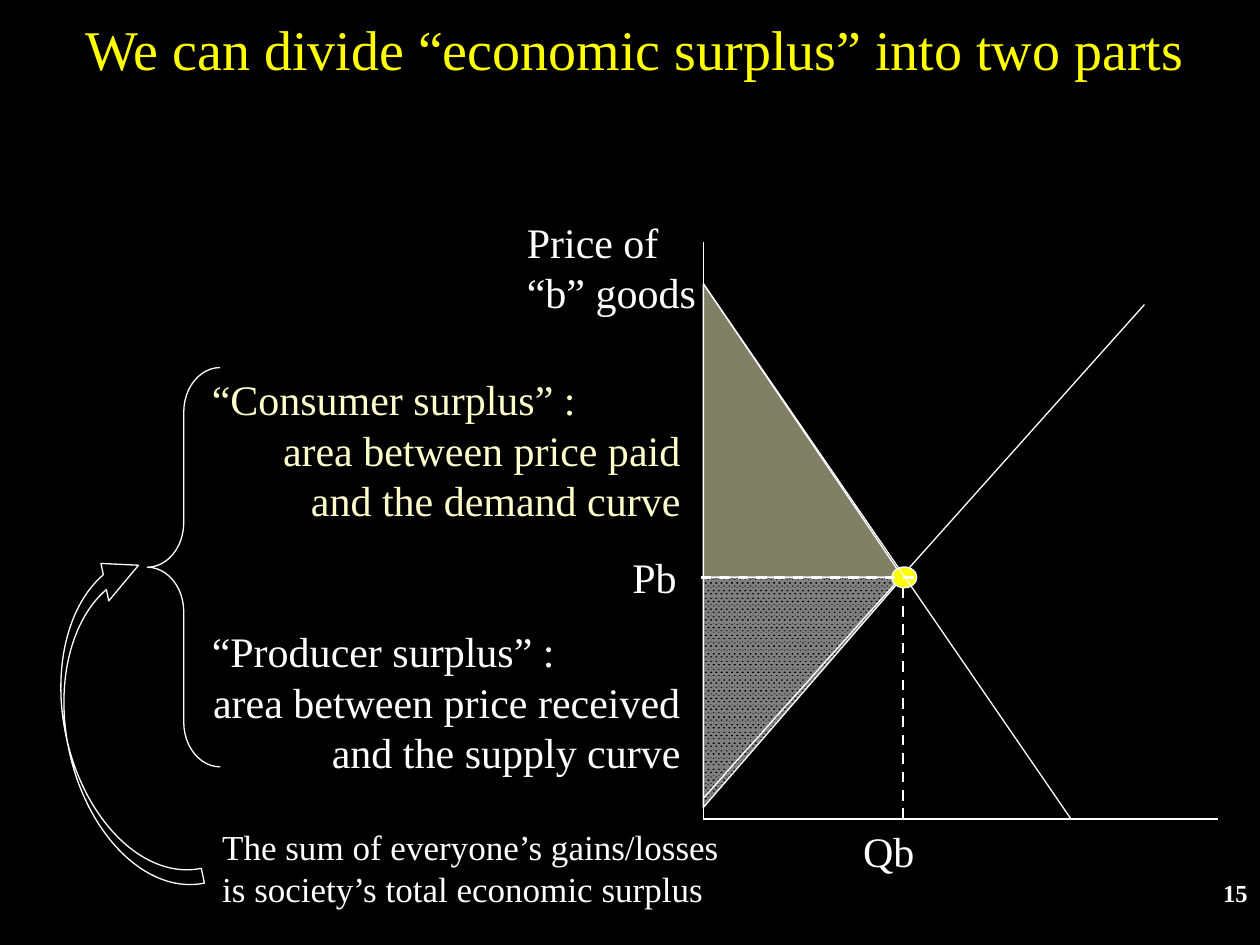
from lxml.etree import SubElement as Sub
from pptx import Presentation
from pptx.dml.color import RGBColor as Rgb
from pptx.enum.dml import MSO_LINE as Dash, MSO_PATTERN as Pat
from pptx.enum.shapes import MSO_CONNECTOR as Conn, MSO_SHAPE as Kind
from pptx.enum.text import PP_ALIGN as Al
from pptx.oxml.ns import qn
from pptx.util import Cm, Pt

HUES = {"back": "000000", "ink": "FFFFFF", "title": "FFFF00", "cream": "FFFFCC"}


def hue(name):
    return Rgb.from_string(HUES[name])


class Pen:
    """Holds the style and the slide being drawn."""
    font = "Times New Roman"
    thin = 0.75

    def __init__(self, slide):
        self.slide = slide
        fill = slide.background.fill
        fill.solid()
        fill.fore_color.rgb = hue("back")

    def text(self, box, rows, size=24, color="ink", aligns=(Al.LEFT,),
             wrap=True, bold=False, space=None):
        frame = self.slide.shapes.add_textbox(*map(Cm, box)).text_frame
        frame.word_wrap = wrap
        frame.text = "\n".join(rows)
        for i, para in enumerate(frame.paragraphs):
            para.alignment = aligns[min(i, len(aligns) - 1)]
            if space:
                para.line_spacing = space
            font = para.font
            font.name, font.size, font.bold = self.font, Pt(size), bold
            font.color.rgb = hue(color)

    def line(self, x1, y1, x2, y2, dash=False):
        line = self.slide.shapes.add_connector(
            Conn.STRAIGHT, Cm(x1), Cm(y1), Cm(x2), Cm(y2))
        line.line.color.rgb = hue("ink")
        line.line.width = Pt(1.5 if dash else self.thin)
        if dash:
            line.line.dash_style = Dash.DASH
        Sub(line._element.spPr, qn("a:effectLst"))

    def shape(self, kind, box, color=None, adj=(), turn=0):
        shape = self.slide.shapes.add_shape(kind, *map(Cm, box))
        shape.shadow.inherit = False
        shape.rotation = turn
        shape.line.color.rgb = hue("ink")
        shape.line.width = Pt(self.thin)
        for i, value in enumerate(adj):
            shape.adjustments[i] = value
        if color:
            shape.fill.solid()
            shape.fill.fore_color.rgb = hue(color)
        else:
            shape.fill.background()
        return shape

    def fade(self, shape):
        """Make the fill of a shape half clear."""
        props = shape._element.spPr
        for tag in ("a:solidFill", "a:pattFill"):
            for fill in props.findall(qn(tag)):
                for tone in fill.iter(qn("a:srgbClr")):
                    Sub(tone, qn("a:alpha"), val="50000")


def main():
    deck = Presentation()
    deck.slide_width, deck.slide_height = Cm(25.4), Cm(19.05)
    pen = Pen(deck.slides.add_slide(deck.slide_layouts[6]))

    # Key points of the graph: axis, base, and the market balance
    left, base = 14.18, 16.51
    qty, price, top, low = 18.2, 11.64, 5.72, 16.28

    pen.text((22.23, 17.58, 3.17, 0.84), ["15"], 14, aligns=(Al.RIGHT,), bold=True)

    # Surplus areas
    gain = pen.shape(Kind.RIGHT_TRIANGLE, (left, top, qty - left, price - top), "cream")
    pen.fade(gain)
    rent = pen.shape(Kind.RIGHT_TRIANGLE, (left, price, qty - left, low - price))
    rent._element.spPr.xfrm.set("flipV", "1")
    rent.fill.patterned()
    rent.fill.pattern = Pat.PERCENT_80
    rent.fill.fore_color.rgb = hue("ink")
    rent.fill.back_color.rgb = hue("back")
    pen.fade(rent)

    # Title
    pen.text((0.2, 0.43, 25.2, 1.35),
             ["We can divide “economic surplus” into two parts"],
             32, "title", (Al.CENTER,), space=0.8)

    # Axes, supply, and the guide down to the quantity
    pen.line(left, 4.87, left, base)
    pen.line(left, base, 24.55, base)
    pen.line(qty, base, qty, price, dash=True)
    pen.line(left, 16.09, 23.07, 6.14)
    pen.text((17.15, base, 1.55, 1.27), ["Qb"], wrap=False)
    pen.text((10.37, 4.23, 4.02, 2.29), ["Price of “b” goods"])

    # Balance point, demand, and the guide across to the price
    pen.shape(Kind.OVAL, (17.98, 11.43, 0.5, 0.42), "title")
    pen.line(left, top, 21.59, base)
    pen.line(18.42, price, 13.97, price, dash=True)
    pen.text((12.5, 11, 1.4, 1.27), ["Pb"], wrap=False)

    # Meaning of the two areas
    sides = (Al.LEFT, Al.RIGHT)
    pen.text((4.02, 7.41, 9.95, 3.33),
             ["“Consumer surplus” :", "area between price paid", "and the demand curve"],
             color="cream", aligns=sides)
    pen.text((4.02, 12.49, 9.95, 3.33),
             ["“Producer surplus” :", "area between price received and the supply curve"],
             aligns=sides)

    # Brace and arrow from the sum
    pen.shape(Kind.LEFT_BRACE, (2.97, 7.41, 1.47, 8.05), adj=(0.613, 0.5))
    pen.shape(Kind.CURVED_DOWN_ARROW, (-1.09, 13.56, 6.93, 2.13),
              adj=(0.143, 0.362, 0.345), turn=258.3)
    pen.text((4.23, base, 13.97, 1.96),
             ["The sum of everyone’s gains/losses", "is society’s total economic surplus"], 20)

    deck.save("out.pptx")


if __name__ == "__main__":
    main()
